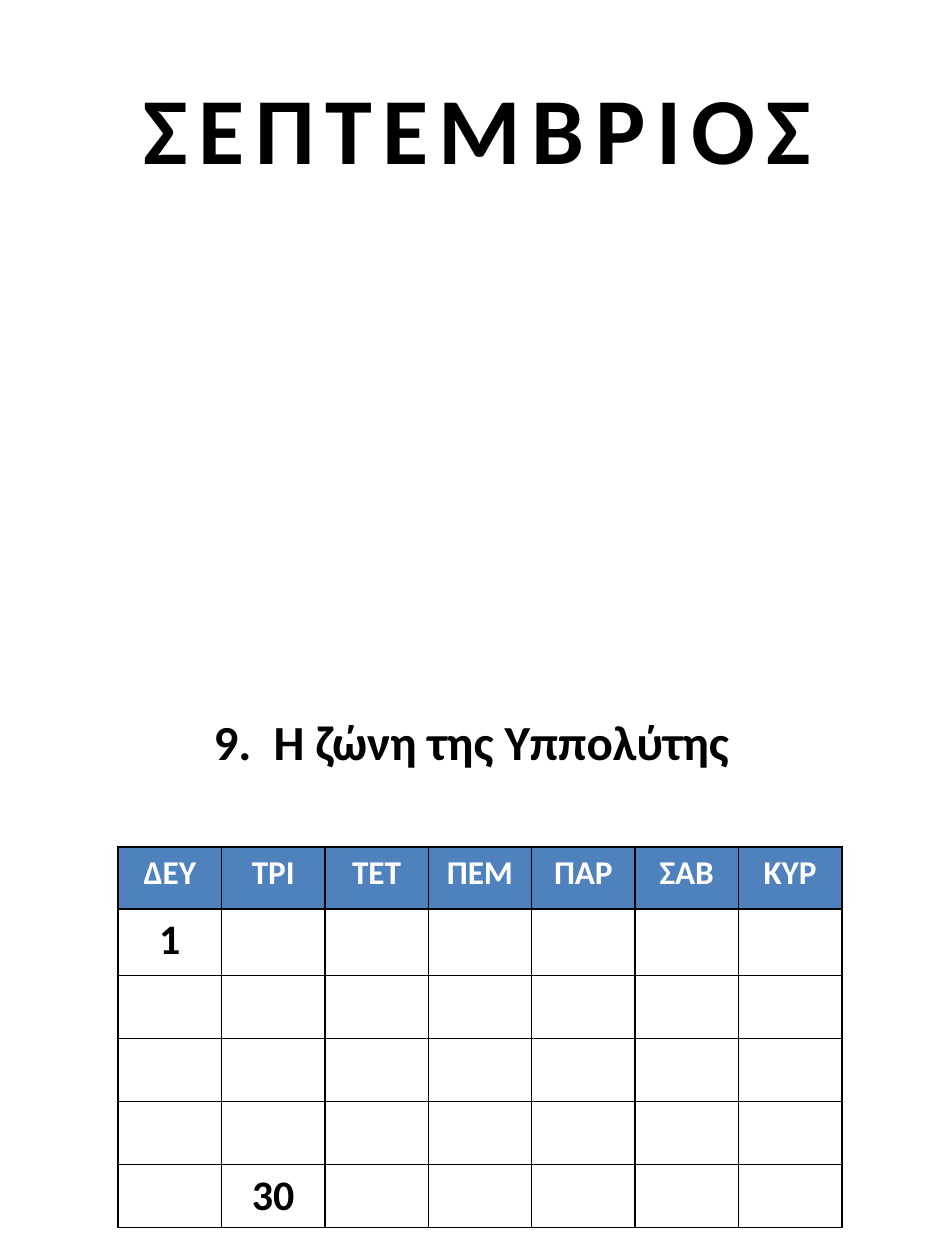
from lxml.etree import SubElement
from pptx import Presentation
from pptx.dml.color import RGBColor
from pptx.enum.text import PP_ALIGN
from pptx.oxml.ns import qn
from pptx.util import Pt

COLORS = {"black": "000000", "white": "FFFFFF", "header": "4F81BD"}
DAYS = ["ΔΕΥ", "ΤΡΙ", "ΤΕΤ", "ΠΕΜ", "ΠΑΡ", "ΣΑΒ", "ΚΥΡ"]
DATES = {(1, 0): "1", (5, 1): "30"}
ROW_HEIGHTS = [35.5, 38, 36, 36, 36, 36]
COL_WIDTH = 59.1


def rgb(name):
    return RGBColor.from_string(COLORS[name])


def add_line(parent, tag, width):
    ln = SubElement(parent, qn(tag), w=str(Pt(width)))
    fill = SubElement(ln, qn("a:solidFill"))
    SubElement(fill, qn("a:srgbClr"), val=COLORS["black"])


def write(tf, text, size, color="black"):
    p = tf.paragraphs[0]
    p.alignment = PP_ALIGN.CENTER
    r = p.add_run()
    r.text = text
    for name, value in {"name": "Calibri", "size": Pt(size), "bold": True}.items():
        setattr(r.font, name, value)
    r.font.color.rgb = rgb(color)
    return r


def add_heading(s, text, left, top, width, height, size):
    tf = s.shapes.add_textbox(Pt(left), Pt(top), Pt(width), Pt(height)).text_frame
    tf.word_wrap = True
    return write(tf, text, size)


def stretch_title(r):
    """Space out the letters and give them a thin outline."""
    rPr = r.font._element
    rPr.set("spc", "600")
    add_line(rPr, "a:ln", 1)
    rPr.insert(0, rPr[-1])


def format_cell(cell, fill):
    cell.margin_top = cell.margin_bottom = Pt(3.25)
    tcPr = cell._tc.get_or_add_tcPr()
    for side in ("L", "R", "T", "B"):
        add_line(tcPr, f"a:ln{side}", 1)
    cell.fill.solid()
    cell.fill.fore_color.rgb = rgb(fill)


def add_calendar(s, left, top):
    rows, cols = len(ROW_HEIGHTS), len(DAYS)
    table = s.shapes.add_table(rows, cols, Pt(left), Pt(top),
                               Pt(COL_WIDTH * cols), Pt(sum(ROW_HEIGHTS))).table
    for column in table.columns:
        column.width = Pt(COL_WIDTH)
    for i, height in enumerate(ROW_HEIGHTS):
        table.rows[i].height = Pt(height)
        for j, day in enumerate(DAYS):
            cell = table.cell(i, j)
            format_cell(cell, "white" if i else "header")
            if i == 0:
                write(cell.text_frame, day, 19, "white")
            elif (i, j) in DATES:
                write(cell.text_frame, DATES[i, j], 24)


def main():
    prs = Presentation()
    prs.slide_width, prs.slide_height = Pt(540), Pt(720)
    s = prs.slides.add_slide(prs.slide_layouts[6])
    stretch_title(add_heading(s, "ΣΕΠΤΕΜΒΡΙΟΣ", 43.2, 36.7, 459.4, 72.7, 54))
    add_heading(s, "9.  Η ζώνη της Υππολύτης", 83.5, 403.2, 371.5, 41, 28)
    add_calendar(s, 67.5, 484)
    prs.save("out.pptx")


if __name__ == "__main__":
    main()
